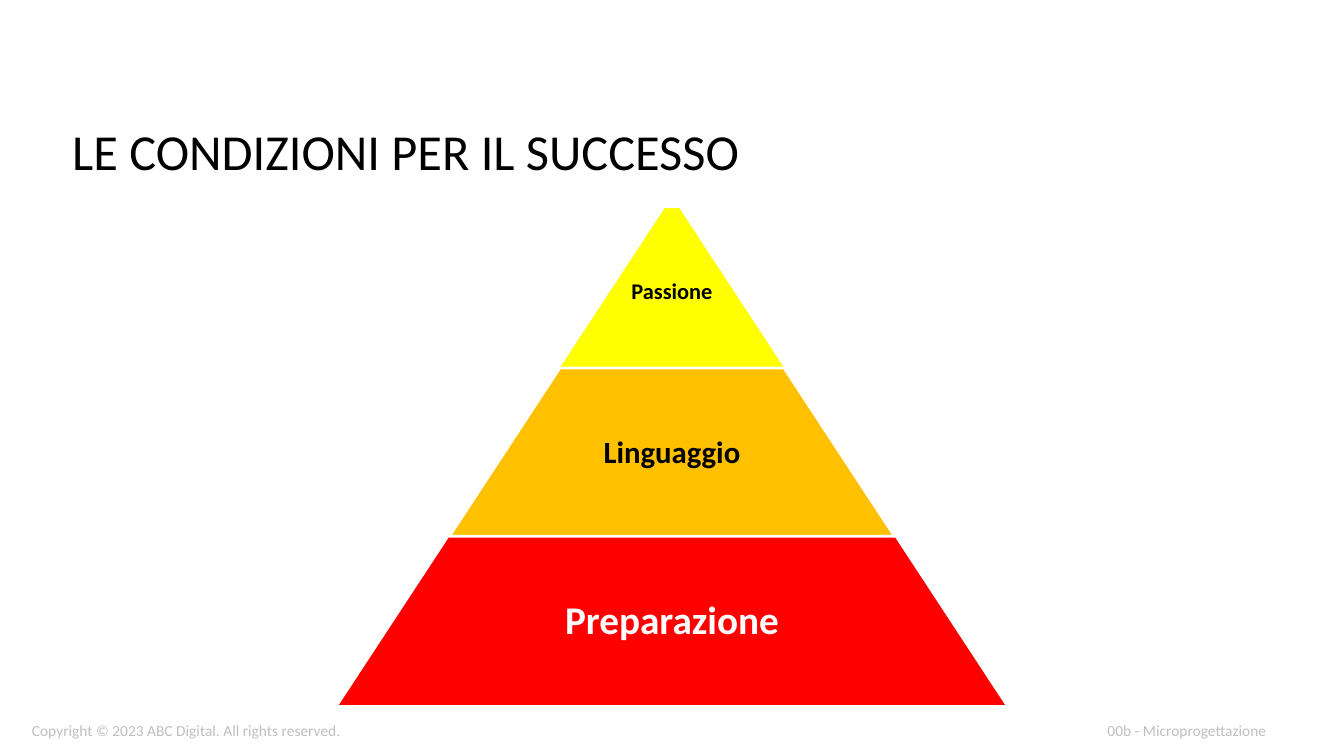
from pptx import Presentation
from pptx.dml.color import RGBColor
from pptx.enum.shapes import MSO_SHAPE
from pptx.enum.text import MSO_ANCHOR, PP_ALIGN
from pptx.util import Inches, Pt

SLIDE_WIDTH, SLIDE_HEIGHT = Inches(13.333), Inches(7.5)
COLUMNS, ROWS = 40, 30
MIDDLE_COLUMN = COLUMNS / 2
TIER_ROWS = 6.76
TIER_SLOPE = 0.656
FOOTER_ROW = 28.4


def color(value):
    """Turn a hex string into a colour."""
    return RGBColor.from_string(value)


def place(column, row, columns, rows):
    """Turn grid units into left, top, width and height."""
    across, down = SLIDE_WIDTH / COLUMNS, SLIDE_HEIGHT / ROWS
    return int(column * across), int(row * down), int(columns * across), int(rows * down)


def add_text(page, area, words, size, ink, align=PP_ALIGN.LEFT, bold=False,
             anchor=MSO_ANCHOR.TOP, inset=0.05, line_spacing=1.0):
    """Add a text box holding one paragraph."""
    frame = page.shapes.add_textbox(*place(*area)).text_frame
    frame.word_wrap = True
    frame.vertical_anchor = anchor
    frame.margin_left = frame.margin_right = Inches(inset)
    frame.margin_top = frame.margin_bottom = Inches(inset)
    para = frame.paragraphs[0]
    para.text = words
    para.alignment = align
    para.line_spacing = line_spacing
    para.font.name = "Calibri"
    para.font.size = Pt(size)
    para.font.bold = bold
    para.font.color.rgb = color(ink)


def add_tier(page, row, columns, label_columns, words, size, ink, fill, inset):
    """Add one centred pyramid tier and its label."""
    tier = page.shapes.add_shape(
        MSO_SHAPE.TRAPEZOID,
        *place(MIDDLE_COLUMN - columns / 2, row, columns, TIER_ROWS))
    tier.adjustments[0] = TIER_SLOPE
    tier.shadow.inherit = False
    tier.fill.solid()
    tier.fill.fore_color.rgb = color(fill)
    tier.line.color.rgb = color("FFFFFF")
    tier.line.width = Pt(2)
    label_area = (MIDDLE_COLUMN - label_columns / 2, row, label_columns, TIER_ROWS)
    add_text(page, label_area, words, size, ink, PP_ALIGN.CENTER, True,
             MSO_ANCHOR.MIDDLE, inset, 0.9)


def main():
    """Build and save the slide."""
    deck = Presentation()
    deck.slide_width, deck.slide_height = SLIDE_WIDTH, SLIDE_HEIGHT
    page = deck.slides.add_slide(deck.slide_layouts[6])
    footers = [
        (0.8, "Copyright © 2023 ABC Digital. All rights reserved.", PP_ALIGN.LEFT),
        (26.04, "00b - Microprogettazione", PP_ALIGN.RIGHT),
    ]
    for column, words, align in footers:
        add_text(page, (column, FOOTER_ROW, 11.8, 1.16), words, 11, "BFBFBF", align)
    add_text(page, (2, 4.56, 36, 3), "LE CONDIZIONI PER IL SUCCESSO", 36, "000000")
    tiers = [
        (8.2, 7.14, 7.14, "Passione", 16, "000000", "FFFF00", 0.02),
        (14.6, 13.33, 8.67, "Linguaggio", 22, "000000", "FFC000", 0.03),
        (21.28, 20, 13, "Preparazione", 28, "FFFFFF", "FF0000", 0.04),
    ]
    for tier in tiers:
        add_tier(page, *tier)
    deck.save("out.pptx")


if __name__ == "__main__":
    main()
